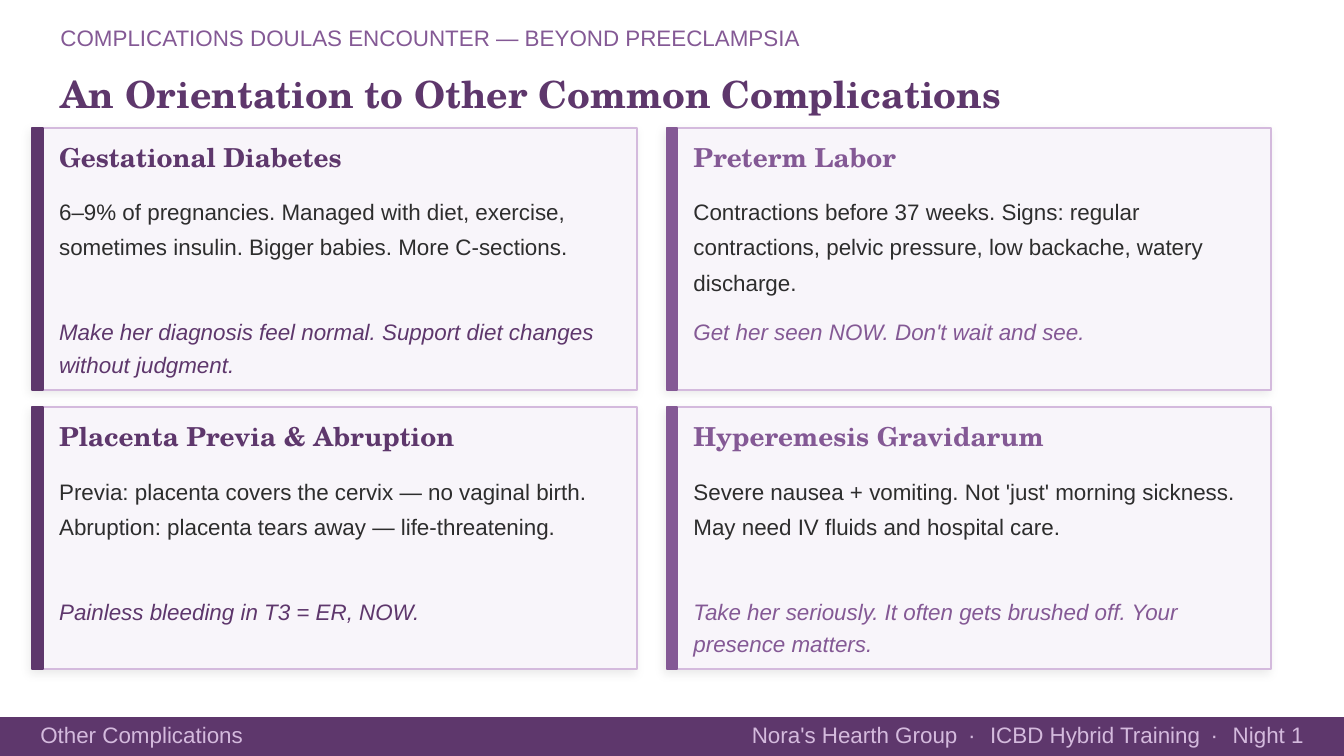
from lxml import etree
from pptx import Presentation
from pptx.dml.color import RGBColor
from pptx.enum.shapes import MSO_SHAPE
from pptx.enum.text import MSO_ANCHOR, PP_ALIGN
from pptx.oxml.ns import qn
from pptx.util import Inches, Pt

RECTANGLE = MSO_SHAPE.RECTANGLE
TOP = MSO_ANCHOR.TOP
LEFT = PP_ALIGN.LEFT
RIGHT = PP_ALIGN.RIGHT

SLIDE_WIDTH = 10
SLIDE_HEIGHT = SLIDE_WIDTH * 9 / 16
PLUM, MAUVE, LILAC = "5E376C", "845995", "D4BADD"
PALE, INK, WHITE = "F8F5FA", "2D2D2D", "FFFFFF"
SERIF, SANS = "TeX Gyre Schola", "Arial"
SEPARATOR = " · "

COMPLICATIONS = [
    ("Gestational Diabetes",
     "6–9% of pregnancies. Managed with diet, exercise, sometimes insulin. "
     "Bigger babies. More C-sections.",
     "Make her diagnosis feel normal. Support diet changes without judgment."),
    ("Preterm Labor",
     "Contractions before 37 weeks. Signs: regular contractions, "
     "pelvic pressure, low backache, watery discharge.",
     "Get her seen NOW. Don't wait and see."),
    ("Placenta Previa & Abruption",
     "Previa: placenta covers the cervix — no vaginal birth. "
     "Abruption: placenta tears away — life-threatening.",
     "Painless bleeding in T3 = ER, NOW."),
    ("Hyperemesis Gravidarum",
     "Severe nausea + vomiting. Not 'just' morning sickness. "
     "May need IV fluids and hospital care.",
     "Take her seriously. It often gets brushed off. Your presence matters."),
]


def rgb(value):
    return RGBColor.from_string(value)


def add_run(paragraph, text, color, styles):
    run = paragraph.add_run()
    run.text = text
    for key, value in styles.items():
        setattr(run.font, key, value)
    run.font.color.rgb = rgb(color)
    return run


def add_text(slide, box, text, color, name=SANS, size=12, spacing=None,
             align=LEFT, **styles):
    frame = slide.shapes.add_textbox(*map(Inches, box)).text_frame
    layout = {"word_wrap": True, "vertical_anchor": TOP, "margin_left": 0,
              "margin_right": 0, "margin_top": 0, "margin_bottom": 0}
    for key, value in layout.items():
        setattr(frame, key, value)
    paragraph = frame.paragraphs[0]
    paragraph.alignment = align
    if spacing:
        paragraph.line_spacing = spacing
    styles.update(name=name, size=Pt(size))
    for index, phrase in enumerate(text.split(SEPARATOR)):
        if index:
            separator = add_run(paragraph, SEPARATOR, color, styles)
            separator.font._element.set("spc", "222")
        add_run(paragraph, phrase, color, styles)


def add_panel(slide, box, fill, line):
    panel = slide.shapes.add_shape(RECTANGLE, *map(Inches, box))
    panel.shadow.inherit = False
    panel.fill.solid()
    panel.fill.fore_color.rgb = rgb(fill)
    panel.line.color.rgb = rgb(line)
    panel.line.width = Pt(1)
    return panel


def add_soft_shadow(panel):
    effects = panel._element.spPr.find(qn("a:effectLst"))
    shadow = etree.SubElement(
        effects, qn("a:outerShdw"), blurRad=str(Pt(5)), dist=str(Pt(2)),
        dir=str(135 * 60000), algn="bl", rotWithShape="0")
    color = etree.SubElement(shadow, qn("a:srgbClr"), val="000000")
    etree.SubElement(color, qn("a:alpha"), val="8000")


def add_heading(slide, box):
    left, top, width, _ = box
    add_text(slide, (left, top, width, 0.22),
             "COMPLICATIONS DOULAS ENCOUNTER — BEYOND PREECLAMPSIA", MAUVE)
    add_text(slide, (left, top + 0.32, width, 0.72),
             "An Orientation to Other Common Complications", PLUM,
             name=SERIF, size=20, spacing=1.1, bold=True)


def add_card(slide, box, accent, title, facts, advice):
    left, top, width, height = box
    add_soft_shadow(add_panel(slide, box, PALE, LILAC))
    add_panel(slide, (left, top, 0.08, height), accent, accent)
    text_left, text_width = left + 0.2, width - 0.4
    add_text(slide, (text_left, top + 0.1, text_width, 0.32), title, accent,
             name=SERIF, size=14, bold=True)
    add_text(slide, (text_left, top + 0.46, text_width, 0.88), facts, INK,
             spacing=1.32)
    add_text(slide, (text_left, top + 1.38, text_width, 0.48), advice, accent,
             spacing=1.2, italic=True)


def add_card_grid(slide, box):
    left, top, width, height = box
    card_width, card_height = 4.5, 1.95
    for index, complication in enumerate(COMPLICATIONS):
        row, column = divmod(index, 2)
        card = (left + column * (width - card_width),
                top + row * (height - card_height), card_width, card_height)
        add_card(slide, card, (PLUM, MAUVE)[column], *complication)


def add_footer(slide, box):
    left, top, width, _ = box
    add_panel(slide, box, PLUM, PLUM)
    add_text(slide, (left + 0.3, top + 0.02, 5.5, 0.25),
             "Other Complications", LILAC)
    add_text(slide, (left, top + 0.02, width - 0.3, 0.25),
             "Nora's Hearth Group · ICBD Hybrid Training · Night 1",
             LILAC, align=RIGHT)


def main():
    deck = Presentation()
    deck.slide_width = Inches(SLIDE_WIDTH)
    deck.slide_height = Inches(SLIDE_HEIGHT)
    slide = deck.slides.add_slide(deck.slide_layouts[6])
    slide.background.fill.solid()
    slide.background.fill.fore_color.rgb = rgb(WHITE)
    add_heading(slide, (0.45, 0.18, 9.1, 1.04))
    add_card_grid(slide, (0.24, 0.95, 9.22, 4.03))
    add_footer(slide, (0, SLIDE_HEIGHT - 0.28, SLIDE_WIDTH, 0.28))
    deck.save("out.pptx")


if __name__ == "__main__":
    main()
